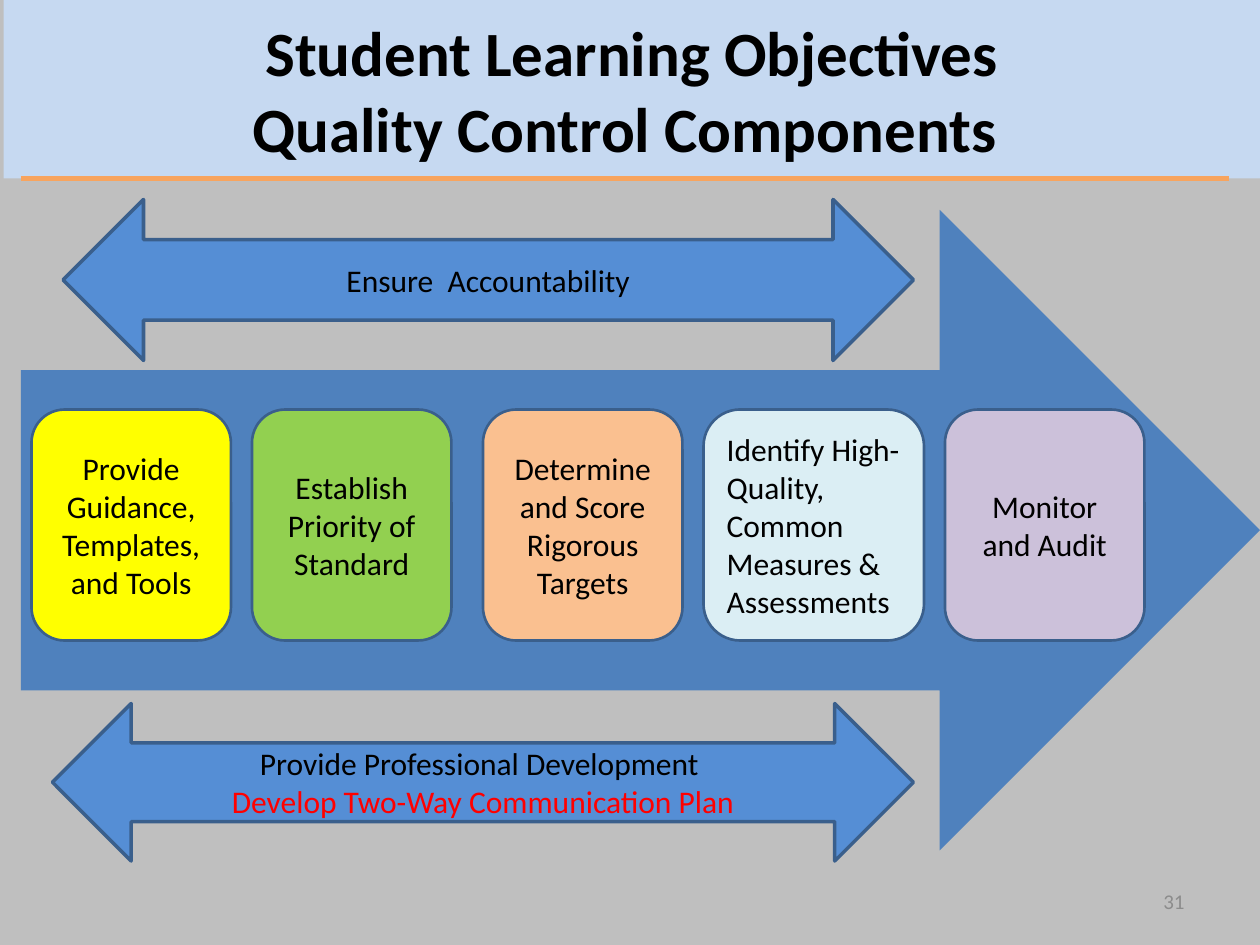
from dataclasses import dataclass

import pptx
import pptx.dml.color
import pptx.enum.shapes
import pptx.enum.text
import pptx.oxml
import pptx.oxml.ns
import pptx.util

Pt = pptx.util.Pt
SHAPE = pptx.enum.shapes.MSO_SHAPE
ALIGN = pptx.enum.text.PP_ALIGN


@dataclass(frozen=True)
class Theme:
    font: str = "Calibri"
    title_size: int = 36
    body_size: int = 18
    number_size: int = 12
    text: str = "000000"
    alert: str = "FF0000"
    number: str = "8C8C8C"
    background: str = "BFBFBF"
    banner: str = "C6D9F1"
    rule: str = "F8A45E"
    process: str = "4F81BD"
    support: str = "558ED5"
    outline: str = "3A5F8C"
    yellow: str = "FFFF00"
    green: str = "92D050"
    orange: str = "FAC090"
    aqua: str = "DBEEF4"
    purple: str = "CCC1DA"


THEME = Theme()


def rgb(value):
    return pptx.dml.color.RGBColor.from_string(value)


def write(sp, text, size=THEME.body_size, colors=(THEME.text,), align=ALIGN.CENTER, bold=False):
    tf = sp.text_frame
    tf.word_wrap = True
    tf.vertical_anchor = pptx.enum.text.MSO_ANCHOR.MIDDLE
    tf.text = text
    for p, color in zip(tf.paragraphs, colors):
        p.alignment = align
        for r in p.runs:
            r.font.name = THEME.font
            r.font.size = Pt(size)
            r.font.bold = bold
            r.font.color.rgb = rgb(color)


def add_block(s, kind, box, fill, line_width=None):
    sp = s.shapes.add_shape(kind, *map(Pt, box))
    sp.shadow.inherit = False
    sp.fill.solid()
    sp.fill.fore_color.rgb = rgb(fill)
    if line_width:
        sp.line.color.rgb = rgb(THEME.outline)
        sp.line.width = Pt(line_width)
    else:
        sp.line.fill.background()
    return sp


def add_title(s):
    sp = add_block(s, SHAPE.RECTANGLE, (2, 0, 718, 102), THEME.banner)
    write(sp, "Student Learning Objectives\vQuality Control Components ",
          THEME.title_size, bold=True)


def add_rule(s):
    line = s.shapes.add_connector(
        pptx.enum.shapes.MSO_CONNECTOR.STRAIGHT, Pt(12), Pt(102), Pt(702), Pt(102))
    line.line.color.rgb = rgb(THEME.rule)
    line.line.width = Pt(3)
    line._element.spPr.append(pptx.oxml.parse_xml(
        f"<a:effectLst {pptx.oxml.ns.nsdecls('a')}/>"))


def add_support_arrow(s, box, text, colors=(THEME.text,)):
    sp = add_block(s, SHAPE.LEFT_RIGHT_ARROW, box, THEME.support, 2)
    write(sp, text, colors=colors)


def add_step(s, left, width, fill, text, align=ALIGN.CENTER):
    sp = add_block(s, SHAPE.ROUNDED_RECTANGLE, (left, 234, width, 132), fill, 1.5)
    write(sp, text, align=align)


def add_slide_number(s, number):
    sp = s.shapes.add_textbox(Pt(516), Pt(500.5), Pt(168), Pt(28.75))
    write(sp, number, THEME.number_size, (THEME.number,), ALIGN.RIGHT)


def main():
    prs = pptx.Presentation()
    prs.slide_width, prs.slide_height = Pt(720), Pt(540)
    s = prs.slides.add_slide(prs.slide_layouts[6])
    s.background.fill.solid()
    s.background.fill.fore_color.rgb = rgb(THEME.background)

    add_title(s)
    add_block(s, SHAPE.RIGHT_ARROW, (12, 120, 708, 366), THEME.process)
    add_rule(s)
    add_support_arrow(s, (36, 114, 486, 92), "Ensure  Accountability")
    add_support_arrow(
        s, (30, 402, 492, 90),
        "Provide Professional Development \nDevelop Two-Way Communication Plan",
        (THEME.text, THEME.alert))

    add_step(s, 18, 114, THEME.yellow, "Provide Guidance, Templates, and Tools")
    add_step(s, 144, 114, THEME.green, "Establish Priority of Standard")
    add_step(s, 276, 114, THEME.orange, "Determine and Score Rigorous Targets")
    add_step(s, 402, 126, THEME.aqua,
             "Identify High-Quality, Common Measures & Assessments", ALIGN.LEFT)
    add_step(s, 540, 114, THEME.purple, "Monitor and Audit")
    add_slide_number(s, "31")
    prs.save("out.pptx")


if __name__ == "__main__":
    main()
